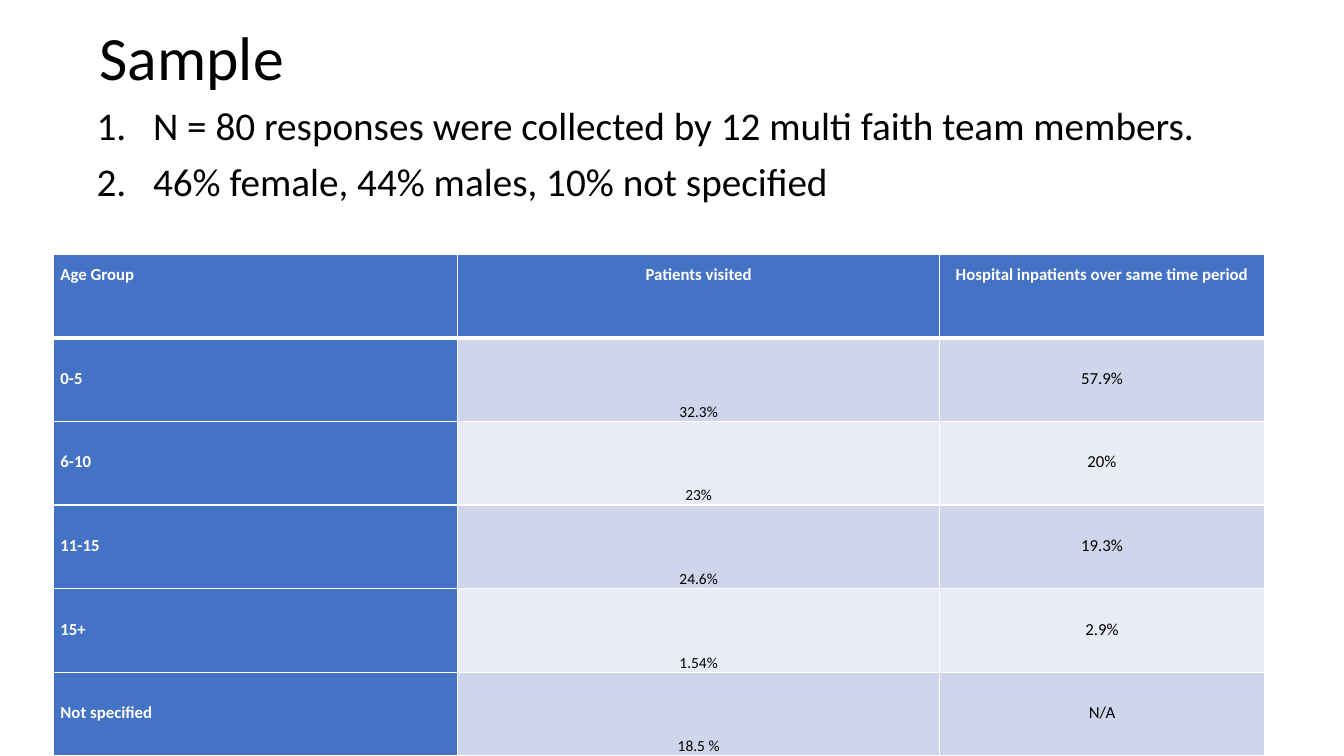
from pptx import Presentation
from pptx import util as u
from pptx.dml.color import RGBColor
from pptx.enum import text
from pptx.oxml import parse_xml
from pptx.oxml.ns import nsdecls

BLACK = RGBColor(0x00, 0x00, 0x00)
WHITE = RGBColor(0xFF, 0xFF, 0xFF)
BLUE = RGBColor(0x44, 0x72, 0xC4)
BAND_DARK = RGBColor(0xCF, 0xD5, 0xEA)
BAND_LIGHT = RGBColor(0xE9, 0xEB, 0xF5)

SAMPLE_POINTS = [
    "N = 80 responses were collected by 12 multi faith team members.",
    "46% female, 44% males, 10% not specified",
]
AGE_ROWS = [
    ("Age Group", "Patients visited", "Hospital inpatients over same time period"),
    ("0-5", "32.3%", "57.9%"),
    ("6-10", "23%", "20%"),
    ("11-15", "24.6%", "19.3%"),
    ("15+", "1.54%", "2.9%"),
    ("Not specified", "18.5 %", "N/A"),
]
COLUMN_WIDTHS = [4.01, 4.78, 3.22]
ROW_HEIGHT = 0.83


def set_font(paragraph, size, color, bold=False):
    paragraph.font.name = "Calibri"
    paragraph.font.size = u.Pt(size)
    paragraph.font.color.rgb = color
    paragraph.font.bold = bold


def add_border(cell, side, points):
    cell._tc.get_or_add_tcPr().append(parse_xml(
        f'<a:ln{side} {nsdecls("a")} w="{u.Pt(points)}"><a:solidFill>'
        f'<a:srgbClr val="{WHITE}"/></a:solidFill></a:ln{side}>'))


presentation = Presentation()
presentation.slide_width = u.Inches(13.33)
presentation.slide_height = u.Inches(7.5)
slide = presentation.slides.add_slide(presentation.slide_layouts[6])

title = slide.shapes.add_textbox(u.Inches(0.89), u.Inches(-0.12), u.Inches(11.5), u.Inches(1.45))
title.text_frame.word_wrap = True
title.text_frame.vertical_anchor = text.MSO_ANCHOR.MIDDLE
paragraph = title.text_frame.paragraphs[0]
paragraph.text = "Sample"
paragraph.line_spacing = 0.9
set_font(paragraph, 44, BLACK)

body = slide.shapes.add_textbox(u.Inches(0.86), u.Inches(1.01), u.Inches(11.5), u.Inches(4.44))
body.text_frame.word_wrap = True
for index, point in enumerate(SAMPLE_POINTS):
    paragraph = body.text_frame.add_paragraph() if index else body.text_frame.paragraphs[0]
    paragraph.text = point
    paragraph.line_spacing = 0.9
    if index:
        paragraph.space_before = u.Pt(10)
    properties = paragraph._p.get_or_add_pPr()
    properties.set("marL", str(u.Inches(0.56)))
    properties.set("indent", str(u.Inches(-0.56)))
    properties.append(parse_xml(f'<a:buAutoNum {nsdecls("a")} type="arabicPeriod"/>'))
    set_font(paragraph, 28, BLACK)

table = slide.shapes.add_table(
    len(AGE_ROWS), len(COLUMN_WIDTHS), u.Inches(0.53), u.Inches(2.52),
    u.Inches(sum(COLUMN_WIDTHS)), u.Inches(ROW_HEIGHT * len(AGE_ROWS))).table
table.first_col = True
for column, width in zip(table.columns, COLUMN_WIDTHS):
    column.width = u.Inches(width)

for row_index, values in enumerate(AGE_ROWS):
    table.rows[row_index].height = u.Inches(ROW_HEIGHT)
    for column_index, value in enumerate(values):
        cell = table.cell(row_index, column_index)
        is_heading = row_index == 0 or column_index == 0
        is_visited = row_index > 0 and column_index == 1
        cell.margin_left = cell.margin_right = u.Inches(0.07)
        cell.margin_top = u.Inches(0 if row_index == 0 or is_visited else 0.2)
        cell.margin_bottom = 0
        cell.vertical_anchor = text.MSO_ANCHOR.BOTTOM if is_visited else text.MSO_ANCHOR.TOP
        for side in "LRTB":
            under_header = (row_index, side) in [(0, "B"), (1, "T")]
            add_border(cell, side, 3 if under_header else 1)
        cell.fill.solid()
        band = BAND_DARK if row_index % 2 else BAND_LIGHT
        cell.fill.fore_color.rgb = BLUE if is_heading else band
        paragraph = cell.text_frame.paragraphs[0]
        paragraph.text = value
        paragraph.line_spacing = 1.5
        paragraph.alignment = text.PP_ALIGN.CENTER if column_index else text.PP_ALIGN.LEFT
        set_font(paragraph, 11 if is_visited else 12, WHITE if is_heading else BLACK, is_heading)

presentation.save("out.pptx")
